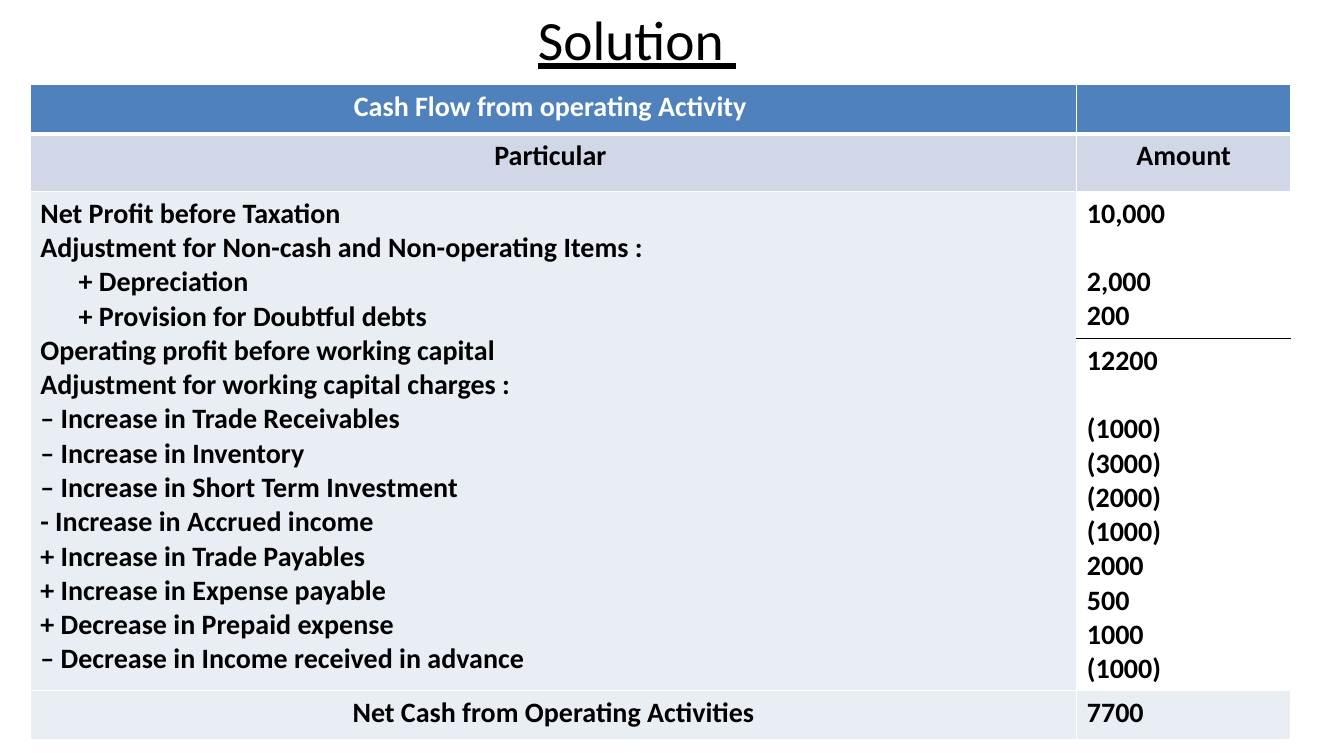
from dataclasses import dataclass

from lxml import etree
from pptx import Presentation
from pptx.dml.color import RGBColor
from pptx.enum.text import MSO_ANCHOR, PP_ALIGN
from pptx.oxml.ns import qn
from pptx.util import Inches, Pt

CENTER, LEFT = PP_ALIGN.CENTER, PP_ALIGN.LEFT
MIDDLE = MSO_ANCHOR.MIDDLE
SLIDE_SIZE = 13.33, 7.5


@dataclass(frozen=True)
class Theme:
    font: str = "Calibri"
    title_size: float = 39.6
    body_size: float = 20
    line_height: float = 24.4
    indent: float = 0.38
    ink: str = "000000"
    white: str = "FFFFFF"
    header: str = "4F81BD"
    subheader: str = "D0D8E8"
    band: str = "E9EDF4"


THEME = Theme()
COLUMNS = 10.38, 2.12
ROWS = 0.49, 0.57, 1.46, 3.49, 0.49
HEADER_ROW, SUBHEADER_ROW, PROFIT_ROW, CAPITAL_ROW, TOTAL_ROW = range(len(ROWS))

ITEMS = [
    "Net Profit before Taxation",
    "Adjustment for Non-cash and Non-operating Items :",
    "+ Depreciation",
    "+ Provision for Doubtful debts",
    "Operating profit before working capital",
    "Adjustment for working capital charges :",
    "– Increase in Trade Receivables",
    "– Increase in Inventory",
    "– Increase in Short Term Investment",
    "- Increase in Accrued income",
    "+ Increase in Trade Payables",
    "+ Increase in Expense payable",
    "+ Decrease in Prepaid expense",
    "– Decrease in Income received in advance",
]
INDENTED_ITEMS = {2, 3}
PROFIT_AMOUNTS = ["10,000", "2,000", "200"]
CAPITAL_AMOUNTS = ["12200", "(1000)", "(3000)", "(2000)", "(1000)",
                   "2000", "500", "1000", "(1000)"]
AFTER_SUBTOTAL = {1}

# Each row holds (lines, alignment, fill, text colour) for both columns.
STATEMENT = [
    [(["Cash Flow from operating Activity "], CENTER, THEME.header, THEME.white),
     ([], LEFT, THEME.header, THEME.white)],
    [(["Particular "], CENTER, THEME.subheader, THEME.ink),
     (["Amount"], CENTER, THEME.subheader, THEME.ink)],
    [(ITEMS, LEFT, THEME.band, THEME.ink),
     (PROFIT_AMOUNTS, LEFT, THEME.white, THEME.ink)],
    [([], LEFT, THEME.band, THEME.ink),
     (CAPITAL_AMOUNTS, LEFT, THEME.white, THEME.ink)],
    [(["Net Cash from Operating Activities"], CENTER, THEME.band, THEME.ink),
     (["7700"], LEFT, THEME.band, THEME.ink)],
]


def write_lines(frame, lines, align, color, **font_format):
    for index, line in enumerate(lines):
        paragraph = frame.paragraphs[0] if index == 0 else frame.add_paragraph()
        paragraph.alignment = align
        run = paragraph.add_run()
        run.text = line
        run.font.color.rgb = RGBColor.from_string(color)
        for name, value in {"name": THEME.font, **font_format}.items():
            setattr(run.font, name, value)


def set_borders(cell, borders):
    """Set cell lines from a dict of side to (colour, points)."""
    properties = cell._tc.get_or_add_tcPr()
    for position, side in enumerate("LRTB"):
        color, points = borders[side]
        line = etree.Element(qn(f"a:ln{side}"), w=str(Pt(points)))
        fill = etree.SubElement(line, qn("a:solidFill"))
        etree.SubElement(fill, qn("a:srgbClr"), val=color)
        properties.insert(position, line)


def borders_of(row, column):
    borders = dict.fromkeys("LRTB", (THEME.white, 1))
    special = {
        (HEADER_ROW, 0): (THEME.white, 3),
        (HEADER_ROW, 1): (THEME.white, 3),
        (PROFIT_ROW, 1): (THEME.ink, 1),
    }
    for side, owner in (("B", row), ("T", row - 1)):
        borders[side] = special.get((owner, column), borders[side])
    return borders


def add_title(slide, left, top, width, height):
    box = slide.shapes.add_textbox(*map(Inches, (left, top, width, height)))
    frame = box.text_frame
    frame.word_wrap = True
    frame.vertical_anchor = MIDDLE
    write_lines(frame, ["Solution "], CENTER, THEME.ink,
                size=Pt(THEME.title_size), underline=True)


def add_statement(slide, left, top):
    table = slide.shapes.add_table(
        len(ROWS), len(COLUMNS),
        *map(Inches, (left, top, sum(COLUMNS), sum(ROWS)))).table
    for column, width in zip(table.columns, COLUMNS):
        column.width = Inches(width)
    for row, height in zip(table.rows, ROWS):
        row.height = Inches(height)

    for row, entries in enumerate(STATEMENT):
        for column, (lines, align, fill, color) in enumerate(entries):
            cell = table.cell(row, column)
            cell.fill.solid()
            cell.fill.fore_color.rgb = RGBColor.from_string(fill)
            set_borders(cell, borders_of(row, column))
            write_lines(cell.text_frame, lines, align, color,
                        size=Pt(THEME.body_size), bold=True)

    items = table.cell(PROFIT_ROW, 0)
    items.merge(table.cell(CAPITAL_ROW, 0))
    for index in INDENTED_ITEMS:
        properties = items.text_frame.paragraphs[index]._p.get_or_add_pPr()
        properties.set("marL", str(Inches(THEME.indent)))
        properties.set("indent", "0")
    for row in (PROFIT_ROW, CAPITAL_ROW):
        paragraphs = table.cell(row, 1).text_frame.paragraphs
        for index in AFTER_SUBTOTAL:
            paragraphs[index].space_before = Pt(THEME.line_height)


def main():
    presentation = Presentation()
    presentation.slide_width, presentation.slide_height = map(Inches, SLIDE_SIZE)
    slide = presentation.slides.add_slide(presentation.slide_layouts[6])
    add_title(slide, 0.29, 0.13, 12.06, 0.5)
    add_statement(slide, 0.3, 0.84)
    presentation.save("out.pptx")


if __name__ == "__main__":
    main()
